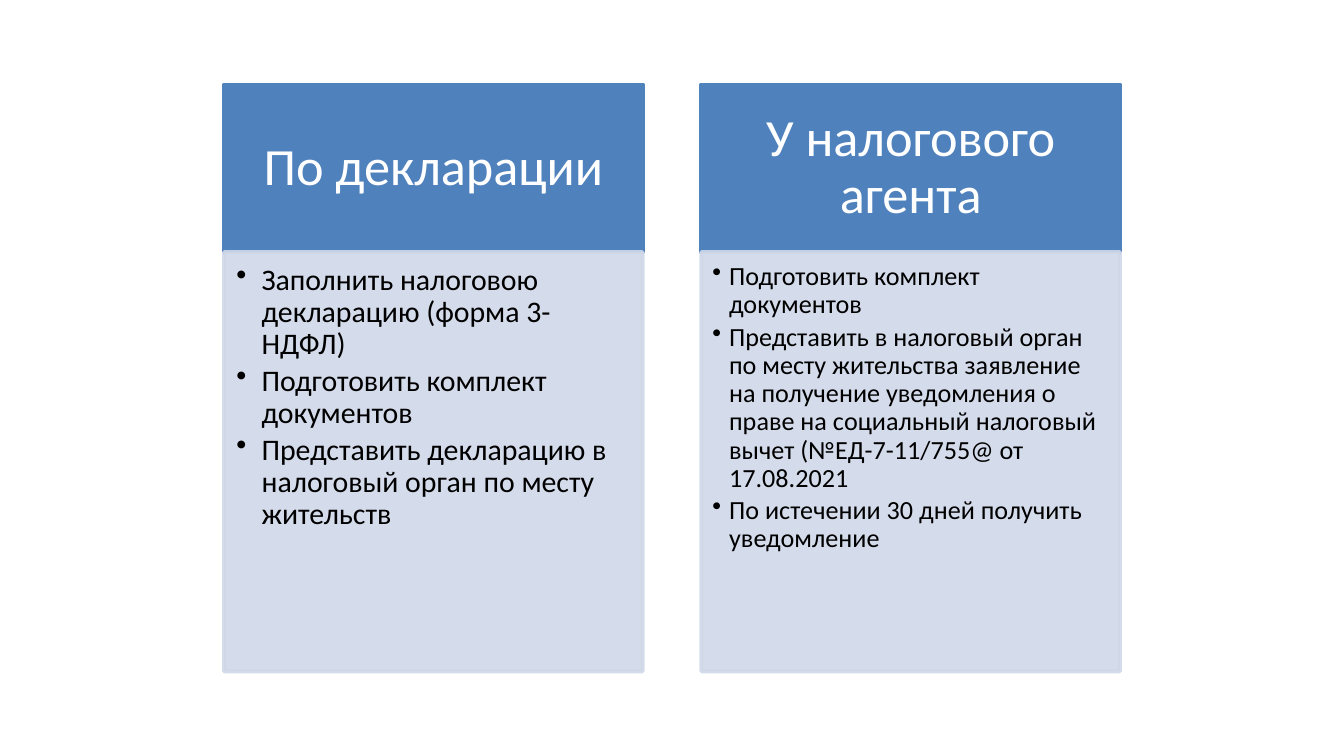
from dataclasses import dataclass

from pptx import Presentation
from pptx.dml.color import RGBColor
from pptx.dml.fill import FillFormat
from pptx.enum.shapes import MSO_SHAPE
from pptx.enum.text import MSO_ANCHOR as Anchor, PP_ALIGN as Align
from pptx.oxml.ns import qn
from pptx.shapes.autoshape import Shape
from pptx.slide import Slide
from pptx.text.text import _Paragraph as Paragraph
from pptx.util import Pt
from lxml.etree import SubElement


@dataclass(frozen=True)
class Theme:
    font: str = "Calibri"
    header_fill: RGBColor = RGBColor(0x4F, 0x81, 0xBD)
    body_fill: RGBColor = RGBColor(0xD0, 0xD8, 0xE8)
    header_text: RGBColor = RGBColor(0xFF, 0xFF, 0xFF)
    body_text: RGBColor = RGBColor(0, 0, 0)
    body_opacity: int = 90
    header_size: float = 28
    large_size: float = 16
    small_size: float = 14
    outline: float = 2
    line_spacing: float = 0.9


@dataclass(frozen=True)
class Method:
    heading: str
    steps: tuple[str, ...]
    size: float
    indent: float
    margins: tuple[float, float, float, float]


THEME = Theme()
SLIDE_WIDTH, SLIDE_HEIGHT = 720, 405
COLUMN_WIDTH, COLUMN_PITCH = 224.3, 255.7
HEADER_HEIGHT, BODY_HEIGHT = 89.7, 224.7
LEFT = (SLIDE_WIDTH - COLUMN_PITCH - COLUMN_WIDTH) / 2
TOP = (SLIDE_HEIGHT - HEADER_HEIGHT - BODY_HEIGHT) / 2
HEADER_MARGINS = (15.7, 9, 15.7, 9)

METHODS = (
    Method(
        "По декларации",
        (
            "Заполнить налоговою декларацию (форма 3-НДФЛ)",
            "Подготовить комплект документов",
            "Представить декларацию в налоговый орган по месту жительств",
        ),
        THEME.large_size, 13.5, (6.7, 6.7, 9, 10.1),
    ),
    Method(
        "У налогового агента",
        (
            "Подготовить комплект документов",
            "Представить в налоговый орган по месту жительства заявление "
            "на получение уведомления о праве на социальный налоговый вычет "
            "(№ЕД-7-11/755@ от 17.08.2021",
            "По истечении 30 дней получить уведомление",
        ),
        THEME.small_size, 9, (5.9, 5.9, 7.8, 8.8),
    ),
)


def paint(fill: FillFormat, color: RGBColor, opacity: int) -> None:
    fill.solid()
    fill.fore_color.rgb = color
    if opacity < 100:
        rgb = fill._xPr.find(qn("a:solidFill")).find(qn("a:srgbClr"))
        SubElement(rgb, qn("a:alpha"), val=str(opacity * 1000))


def add_panel(slide: Slide, left: float, top: float, height: float,
              color: RGBColor, margins: tuple[float, float, float, float],
              anchor: Anchor, opacity: int = 100) -> Shape:
    panel = slide.shapes.add_shape(
        MSO_SHAPE.RECTANGLE, Pt(left), Pt(top), Pt(COLUMN_WIDTH), Pt(height))
    panel.shadow.inherit = False
    paint(panel.fill, color, opacity)
    paint(panel.line.fill, color, opacity)
    panel.line.width = Pt(THEME.outline)
    frame = panel.text_frame
    frame.word_wrap = True
    frame.vertical_anchor = anchor
    (frame.margin_left, frame.margin_top,
     frame.margin_right, frame.margin_bottom) = map(Pt, margins)
    return panel


def write(paragraph: Paragraph, wording: str, size: float,
          color: RGBColor, align: Align, spacing: float) -> None:
    paragraph.text = wording
    paragraph.alignment = align
    paragraph.line_spacing = THEME.line_spacing
    paragraph.space_after = Pt(size * spacing)
    paragraph.font.name = THEME.font
    paragraph.font.size = Pt(size)
    paragraph.font.color.rgb = color


def add_bullet(paragraph: Paragraph, indent: float) -> None:
    paragraph.level = 1
    properties = paragraph._p.get_or_add_pPr()
    properties.set("marL", str(Pt(indent)))
    properties.set("indent", str(-Pt(indent)))
    SubElement(properties, qn("a:buChar"), char="•")


def add_method(slide: Slide, method: Method, left: float) -> None:
    header = add_panel(slide, left, TOP, HEADER_HEIGHT, THEME.header_fill,
                       HEADER_MARGINS, Anchor.MIDDLE)
    write(header.text_frame.paragraphs[0], method.heading, THEME.header_size,
          THEME.header_text, Align.CENTER, 0.35)
    body = add_panel(slide, left, TOP + HEADER_HEIGHT, BODY_HEIGHT,
                     THEME.body_fill, method.margins, Anchor.TOP,
                     THEME.body_opacity).text_frame
    for index, step in enumerate(method.steps):
        paragraph = body.add_paragraph() if index else body.paragraphs[0]
        add_bullet(paragraph, method.indent)
        write(paragraph, step, method.size, THEME.body_text, Align.LEFT, 0.15)


def main() -> None:
    deck = Presentation()
    deck.slide_width, deck.slide_height = Pt(SLIDE_WIDTH), Pt(SLIDE_HEIGHT)
    slide = deck.slides.add_slide(deck.slide_layouts.get_by_name("Blank"))
    for column, method in enumerate(METHODS):
        add_method(slide, method, LEFT + column * COLUMN_PITCH)
    deck.save("out.pptx")


if __name__ == "__main__":
    main()
